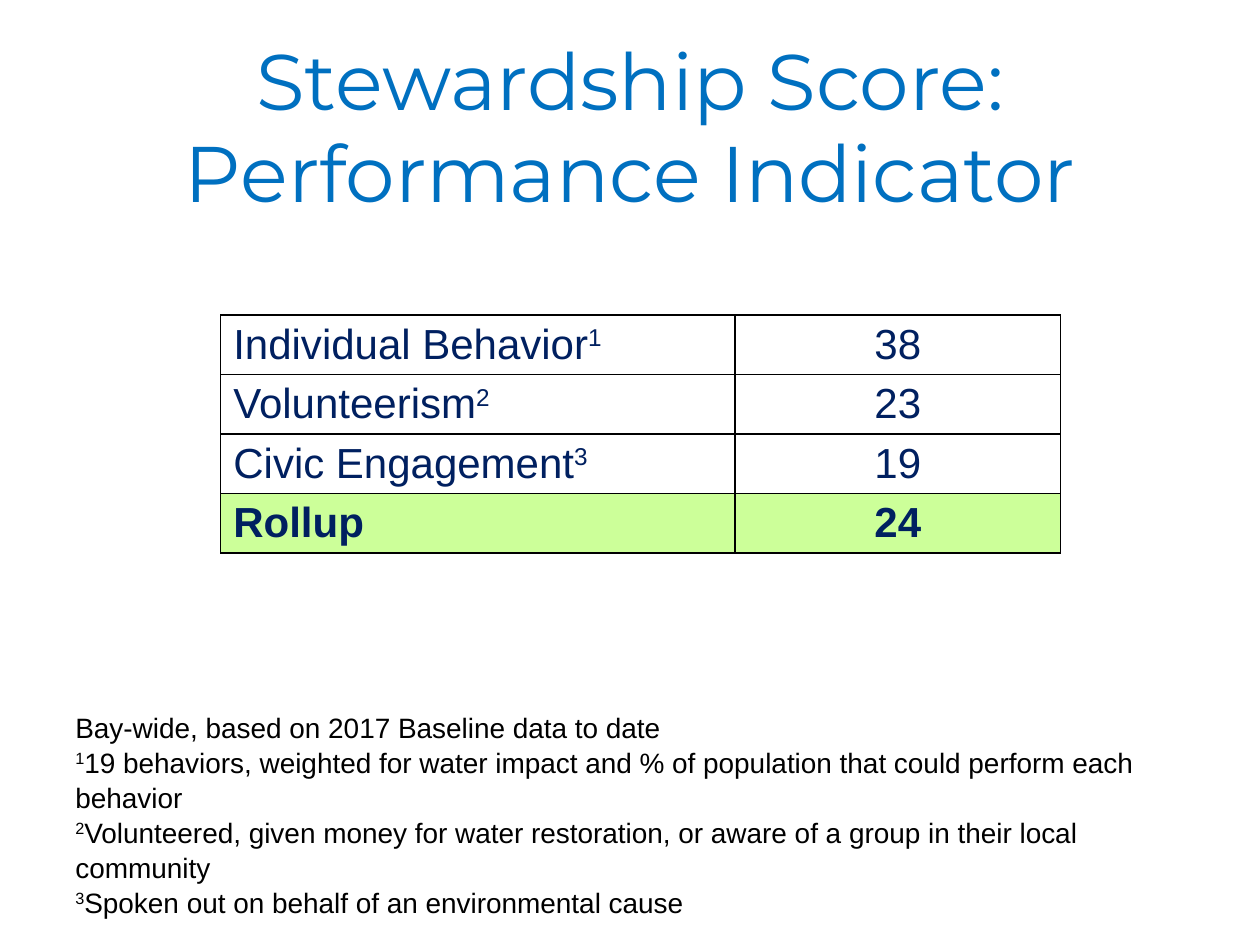
import dataclasses

import pptx
import pptx.dml.color
import pptx.enum.text
import pptx.oxml
import pptx.oxml.ns
import pptx.util
from pptx.util import Cm

ALIGN = pptx.enum.text.PP_ALIGN
ANCHOR = pptx.enum.text.MSO_ANCHOR


@dataclasses.dataclass(frozen=True)
class Theme:
    title_font: str = "Montserrat"
    body_font: str = "Arial"
    title_color: str = "0070C0"
    table_color: str = "002060"
    note_color: str = "000000"
    border_color: str = "000000"
    highlight: str = "CCFF99"
    title_size: int = 45
    table_size: int = 24
    note_size: int = 16
    border_width: int = 1


class SlideBuilder:
    def __init__(self, slide, theme):
        self.slide = slide
        self.theme = theme

    def style(self, p, font, size, color, align=ALIGN.LEFT, bold=False):
        p.alignment = align
        p.font.name = font
        p.font.size = pptx.util.Pt(size)
        p.font.bold = bold
        p.font.color.rgb = pptx.dml.color.RGBColor.from_string(color)

    def add_run(self, p, text, superscript=False):
        r = p.add_run()
        r.text = text
        if superscript:
            r._r.get_or_add_rPr().set("baseline", "30000")

    def title(self, lines, left, top, width, height):
        t = self.theme
        sp = self.slide.shapes.title
        sp.left, sp.top, sp.width, sp.height = left, top, width, height
        tf = sp.text_frame
        tf.auto_size = pptx.enum.text.MSO_AUTO_SIZE.NONE
        tf.vertical_anchor = ANCHOR.TOP
        tf.text = "\n".join(lines)
        for p in tf.paragraphs:
            self.style(p, t.title_font, t.title_size, t.title_color, ALIGN.CENTER)
            p.line_spacing = 0.98

    def border(self, cell):
        """Outline a cell; must run before its fill is set, as the schema orders them."""
        tc_pr = cell._tc.get_or_add_tcPr()
        width = pptx.util.Pt(self.theme.border_width)
        for side in ("lnL", "lnR", "lnT", "lnB"):
            tc_pr.append(pptx.oxml.parse_xml(
                f'<a:{side} {pptx.oxml.ns.nsdecls("a")} w="{width}"><a:solidFill>'
                f'<a:srgbClr val="{self.theme.border_color}"/></a:solidFill></a:{side}>'))

    def score_table(self, rows, left, top, col_widths, row_height):
        """Draw rows of (label, footnote mark, score); the last row is the total."""
        t = self.theme
        frame = self.slide.shapes.add_table(
            len(rows), len(col_widths), left, top, sum(col_widths), row_height * len(rows))
        table = frame.table
        table.first_row = table.horz_banding = False
        for column, width in zip(table.columns, col_widths):
            column.width = width
        for i, (label, mark, score) in enumerate(rows):
            table.rows[i].height = row_height
            is_total = i == len(rows) - 1
            for j, (text, align) in enumerate(((label, ALIGN.LEFT), (score, ALIGN.CENTER))):
                cell = table.cell(i, j)
                cell.margin_top = cell.margin_bottom = Cm(0.1)
                cell.vertical_anchor = ANCHOR.MIDDLE
                self.border(cell)
                if is_total:
                    cell.fill.solid()
                    cell.fill.fore_color.rgb = pptx.dml.color.RGBColor.from_string(t.highlight)
                else:
                    cell.fill.background()
                p = cell.text_frame.paragraphs[0]
                self.style(p, t.body_font, t.table_size, t.table_color, align, is_total)
                self.add_run(p, text)
                if j == 0 and mark:
                    self.add_run(p, mark, superscript=True)

    def footnotes(self, notes, left, top, width, height):
        """Draw (mark, text) notes, one paragraph each."""
        t = self.theme
        tf = self.slide.shapes.add_textbox(left, top, width, height).text_frame
        tf.word_wrap = True
        for i, (mark, text) in enumerate(notes):
            p = tf.add_paragraph() if i else tf.paragraphs[0]
            self.style(p, t.body_font, t.note_size, t.note_color)
            p.line_spacing = 1.04
            if mark:
                self.add_run(p, mark, superscript=True)
            self.add_run(p, text)


def main():
    prs = pptx.Presentation()
    prs.slide_width, prs.slide_height = Cm(25.4), Cm(19.05)
    title_only = prs.slide_layouts.get_by_name("Title Only")
    s = SlideBuilder(prs.slides.add_slide(title_only), Theme())

    s.title(["Stewardship Score:", "Performance Indicator"],
            Cm(1.9), Cm(0.6), Cm(21.6), Cm(5.7))
    s.score_table(
        [("Individual Behavior", "1", "38"),
         ("Volunteerism", "2", "23"),
         ("Civic Engagement", "3", "19"),
         ("Rollup", "", "24")],
        Cm(4.45), Cm(6.35), [Cm(10.37), Cm(6.56)], Cm(1.2))
    s.footnotes(
        [("", "Bay-wide, based on 2017 Baseline data to date"),
         ("1", "19 behaviors, weighted for water impact and % of population "
               "that could perform each behavior"),
         ("2", "Volunteered, given money for water restoration, or aware of "
               "a group in their local community"),
         ("3", "Spoken out on behalf of an environmental cause")],
        Cm(1.27), Cm(14.17), Cm(23.29), Cm(4.4))

    prs.save("out.pptx")


if __name__ == "__main__":
    main()
